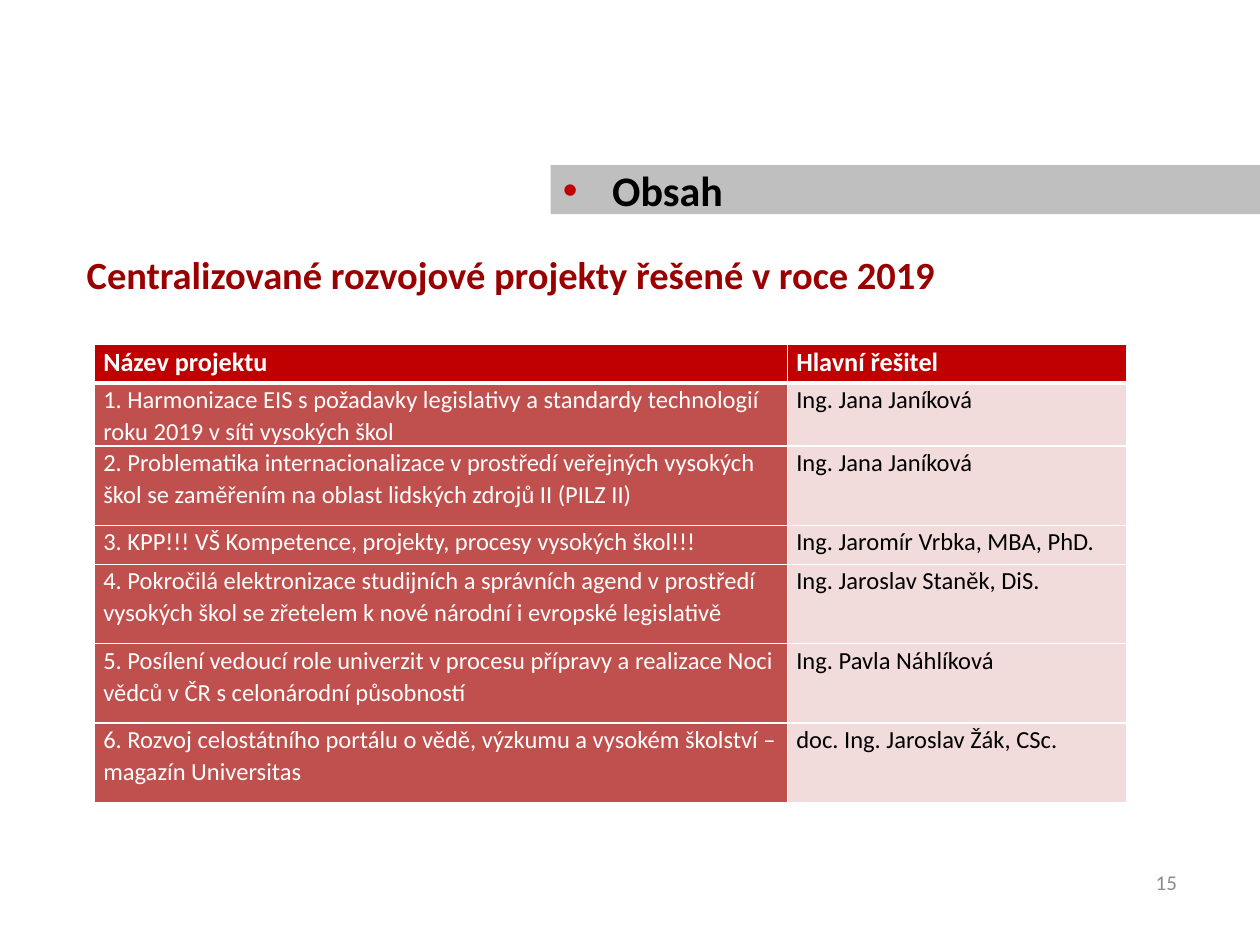
from lxml import etree
from pptx import Presentation
from pptx.dml.color import RGBColor
from pptx.enum.shapes import MSO_SHAPE
from pptx.enum.text import MSO_ANCHOR, PP_ALIGN
from pptx.oxml.ns import qn
from pptx.util import Inches, Pt

RECTANGLE = MSO_SHAPE.RECTANGLE
TOP, MIDDLE = MSO_ANCHOR.TOP, MSO_ANCHOR.MIDDLE
LEFT, RIGHT = PP_ALIGN.LEFT, PP_ALIGN.RIGHT

WHITE = RGBColor(0xFF, 0xFF, 0xFF)
BLACK = RGBColor(0x00, 0x00, 0x00)
GRAY = RGBColor(0x8C, 0x8C, 0x8C)
SILVER = RGBColor(0xBF, 0xBF, 0xBF)
DARK_RED = RGBColor(0x99, 0x00, 0x00)
RED = RGBColor(0xC0, 0x00, 0x00)
BRICK = RGBColor(0xC0, 0x50, 0x4D)
PINK = RGBColor(0xF2, 0xDC, 0xDB)


def write(frame, text, size, color, bold=False, align=LEFT, anchor=TOP):
    frame.word_wrap = True
    frame.vertical_anchor = anchor
    para = frame.paragraphs[0]
    para.alignment = align
    span = para.add_run()
    span.text = text
    span.font.color.rgb = color
    looks = {"name": "Calibri", "size": Pt(size), "bold": bold}
    for name, value in looks.items():
        setattr(span.font, name, value)
    return para


def add_border(cell, side, width):
    line = etree.SubElement(cell._tc.get_or_add_tcPr(), qn(f"a:ln{side}"), w=str(Pt(width)))
    fill = etree.SubElement(line, qn("a:solidFill"))
    etree.SubElement(fill, qn("a:srgbClr"), val=str(WHITE))


deck = Presentation()
deck.slide_width, deck.slide_height = Inches(10), Inches(7.5)
page = deck.slides.add_slide(deck.slide_layouts[6])

# Heading
box = page.shapes.add_textbox(Inches(0.59), Inches(1.94), Inches(8.66), Inches(5.28))
write(box.text_frame, "Centralizované rozvojové projekty řešené v roce 2019", 22, DARK_RED, bold=True)

# Page number
box = page.shapes.add_textbox(Inches(7.11), Inches(6.8), Inches(2.33), Inches(0.4))
write(box.text_frame, "15", 12, GRAY, align=RIGHT, anchor=MIDDLE)

# Title band with a red bullet
band = page.shapes.add_shape(RECTANGLE, Inches(4.37), Inches(1.31), Inches(5.63), Inches(0.39))
band.shadow.inherit = False
band.fill.solid()
band.fill.fore_color.rgb = SILVER
band.line.fill.background()
para = write(band.text_frame, "Obsah", 24, BLACK, bold=True, anchor=MIDDLE)
layout = para._p.get_or_add_pPr()
layout.set("marL", str(Inches(0.39)))
layout.set("indent", str(-Inches(0.39)))
bullet_color = etree.SubElement(layout, qn("a:buClr"))
etree.SubElement(bullet_color, qn("a:srgbClr"), val=str(RED))
etree.SubElement(layout, qn("a:buFont"), typeface="Arial")
etree.SubElement(layout, qn("a:buChar"), char="•")

# Project table
projects = [
    ("Název projektu", "Hlavní řešitel"),
    ("1. Harmonizace EIS s požadavky legislativy a standardy technologií roku 2019 v síti vysokých škol",
     "Ing. Jana Janíková"),
    ("2. Problematika internacionalizace v prostředí veřejných vysokých škol se zaměřením "
     "na oblast lidských zdrojů II (PILZ II)", "Ing. Jana Janíková"),
    ("3. KPP!!! VŠ Kompetence, projekty, procesy vysokých škol!!!", "Ing. Jaromír Vrbka, MBA, PhD."),
    ("4. Pokročilá elektronizace studijních a správních agend v prostředí vysokých škol "
     "se zřetelem k nové národní i evropské legislativě", "Ing. Jaroslav Staněk, DiS."),
    ("5. Posílení vedoucí role univerzit v procesu přípravy a realizace Noci vědců "
     "v ČR s celonárodní působností", "Ing. Pavla Náhlíková"),
    ("6. Rozvoj celostátního portálu o vědě, výzkumu a vysokém školství – magazín Universitas",
     "doc. Ing. Jaroslav Žák, CSc."),
]
column_widths = [5.5, 2.69]
row_heights = [0.31, 0.48, 0.63, 0.31, 0.63, 0.63, 0.63]
last_row = len(projects) - 1
table = page.shapes.add_table(len(projects), 2, Inches(0.75), Inches(2.73),
                              Inches(8.19), Inches(sum(row_heights))).table
for column, width in zip(table.columns, column_widths):
    column.width = Inches(width)

for r, (texts, height) in enumerate(zip(projects, row_heights)):
    table.rows[r].height = Inches(height)
    for c, text in enumerate(texts):
        cell = table.cell(r, c)
        cell.margin_left = cell.margin_right = Inches(0.07)
        cell.margin_top = cell.margin_bottom = 0
        header = r == 0
        color = BLACK if c and not header else WHITE
        para = write(cell.text_frame, text, 15 if header else 14, color, bold=header)
        para.line_spacing = 1.07
        if c == 0 and 0 < r < last_row:
            para.space_after = Pt(8)

        # White rules, thicker under the header
        widths = {"L": 1, "R": 1, "T": 3 if r == 1 else 1, "B": 3 if header else 1}
        for side, width in widths.items():
            add_border(cell, side, width)
        cell.fill.solid()
        cell.fill.fore_color.rgb = RED if header else (BRICK, PINK)[c]

deck.save("out.pptx")
